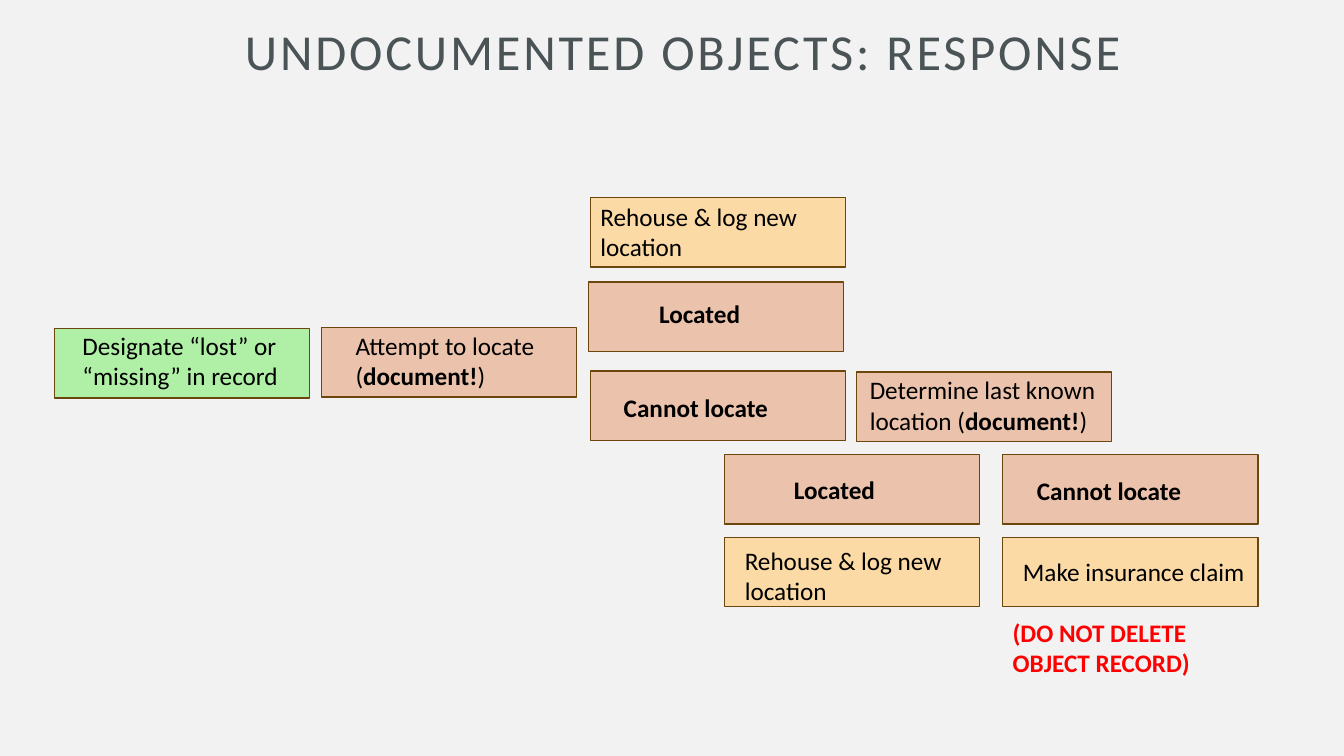
from pptx import Presentation
from pptx import util as u
from pptx.dml import color
from pptx.enum import shapes, text


def rgb(code):
    return color.RGBColor.from_string(code)


def assign(target, values):
    for name, value in values.items():
        setattr(target, name, value)


class Deck:
    face = "Calibri"
    edge = "6C470D"
    size = (6.43, 1.75)

    def __init__(self, wide, high, back):
        self.file = Presentation()
        assign(self.file, {"slide_width": u.Cm(wide), "slide_height": u.Cm(high)})
        self.slide = self.file.slides.add_slide(self.file.slide_layouts[6])
        fill = self.slide.background.fill
        fill.solid()
        fill.fore_color.rgb = rgb(back)

    def box(self, left, top, fill):
        place = [u.Cm(n) for n in (left, top, *self.size)]
        shape = self.slide.shapes.add_shape(shapes.MSO_SHAPE.RECTANGLE, *place)
        shape.shadow.inherit = False
        shape.fill.solid()
        shape.fill.fore_color.rgb = rgb(fill)
        shape.line.color.rgb = rgb(self.edge)
        shape.line.width = u.Pt(1)

    def label(self, left, top, wide, high, runs, tint="000000", size=18):
        place = [u.Cm(n) for n in (left, top, wide, high)]
        frame = self.slide.shapes.add_textbox(*place).text_frame
        frame.word_wrap = True
        para = frame.paragraphs[0]
        for words, bold in runs:
            run = para.add_run()
            run.text = words
            assign(run.font, {"name": self.face, "size": u.Pt(size), "bold": bold})
            run.font.color.rgb = rgb(tint)
        return frame

    def title(self, words):
        frame = self.label(1.37, 0.38, 31.7, 1.96, [(words, False)], "4A5356", 36)
        assign(frame, {
            "vertical_anchor": text.MSO_ANCHOR.MIDDLE,
            "margin_left": u.Cm(0.51), "margin_right": u.Cm(0.51),
            "margin_top": 0, "margin_bottom": 0,
        })
        para = frame.paragraphs[0]
        assign(para, {"alignment": text.PP_ALIGN.CENTER, "line_spacing": 0.9})
        para.runs[0].font._element.set("spc", "200")


def main():
    deck = Deck(33.87, 19.05, "F2F2F2")
    deck.title("UNDOCUMENTED OBJECTS: RESPONSE")

    green, rose, sand = "AFF0A6", "EBC2AB", "FBDAA5"
    located = [("Located", True)]
    absent = [("Cannot locate", True)]
    rehouse = [("Rehouse & log new location", False)]
    proof = [("document!", True), (")", False)]
    tall, low = 1.8, 1.02

    steps = [
        (1.37, 8.28, green, (1.83, 8.2, 6.05, tall),
         [("Designate “lost” or “missing” in record", False)]),
        (8.1, 8.26, rose, (8.71, 8.2, 6.78, tall),
         [("Attempt to locate (", False), *proof]),
        (14.88, 4.98, sand, (14.88, 4.95, 6.78, tall), rehouse),
        (14.83, 7.11, rose, (16.36, 7.39, 3.4, low), located),
        (14.88, 9.35, rose, (15.47, 9.75, 4.75, low), absent),
        (21.59, 9.37, rose, (21.67, 9.32, 6.78, tall),
         [("Determine last known location (", False), *proof]),
        (18.26, 11.46, rose, (19.76, 11.84, 3.4, low), located),
        (25.27, 11.46, rose, (25.88, 11.86, 4.75, low), absent),
        (18.26, 13.54, sand, (18.52, 13.61, 6.78, tall), rehouse),
        (25.27, 13.54, sand, (25.53, 13.89, 6.78, low),
         [("Make insurance claim", False)]),
    ]
    for left, top, fill, place, runs in steps:
        deck.box(left, top, fill)
        deck.label(*place, runs)

    deck.label(25.27, 15.42, 6.78, tall,
               [("(DO NOT DELETE OBJECT RECORD)", True)], "FF0000")
    deck.file.save("out.pptx")


if __name__ == "__main__":
    main()
